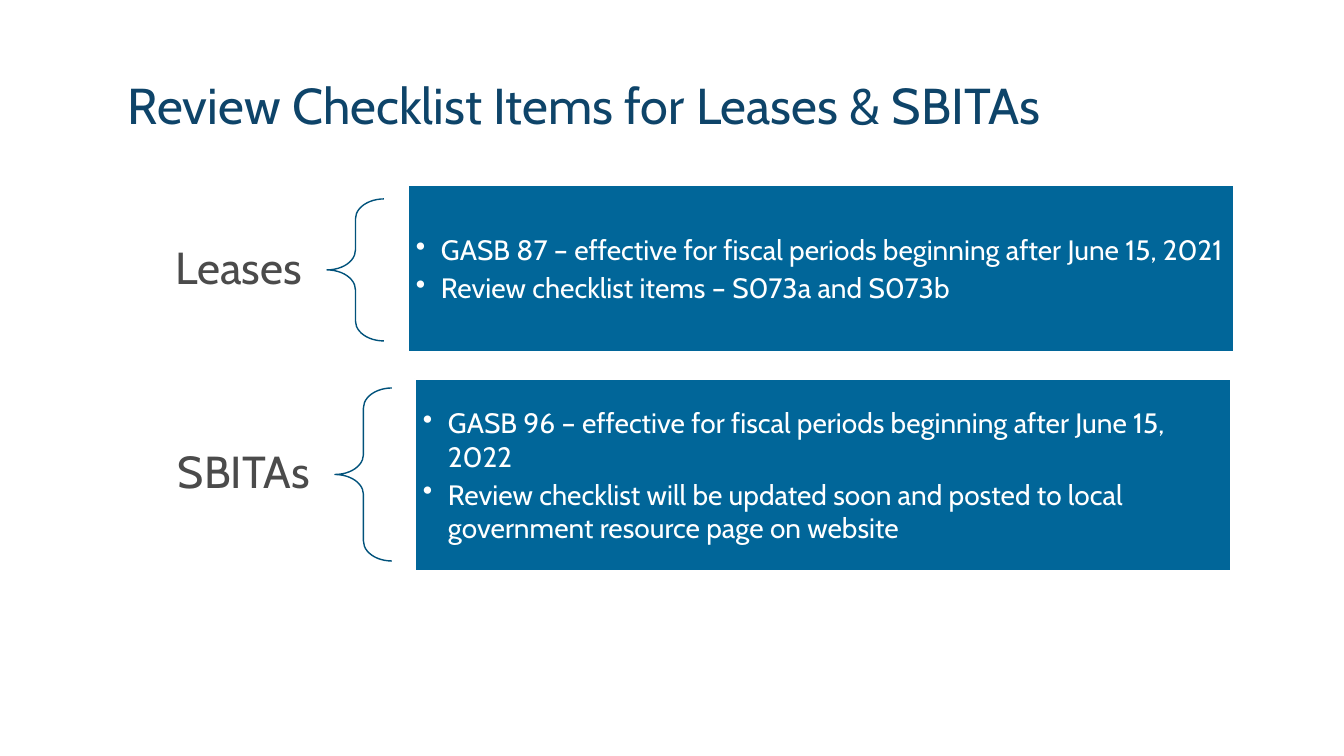
from pptx import Presentation
from pptx.dml.color import RGBColor
from pptx.enum.shapes import MSO_SHAPE
from pptx.enum.text import MSO_ANCHOR, PP_ALIGN
from pptx.oxml.ns import qn
from pptx.util import Emu, Pt
from lxml import etree

RECTANGLE, LEFT_BRACE = MSO_SHAPE.RECTANGLE, MSO_SHAPE.LEFT_BRACE
TOP, MIDDLE = MSO_ANCHOR.TOP, MSO_ANCHOR.MIDDLE
LEFT, RIGHT = PP_ALIGN.LEFT, PP_ALIGN.RIGHT

PX = 914400 / 100.8
FONT = "Cabin"
COLORS = {"title": "0E4469", "label": "4B4B4B", "brace": "01527B",
          "panel": "016699", "white": "FFFFFF"}


def px(*lengths):
    """Turn pixel lengths into EMU."""
    return [Emu(round(length * PX)) for length in lengths]


def write(shape, lines, size, color, anchor, align, insets, spacing=1, bullets=False):
    """Fill a shape with evenly styled paragraphs."""
    frame = shape.text_frame
    side, edge = px(*insets)
    frame_format = {"word_wrap": True, "vertical_anchor": anchor,
                    "margin_left": side, "margin_right": side,
                    "margin_top": edge, "margin_bottom": edge}
    for name, value in frame_format.items():
        setattr(frame, name, value)
    frame.text = "\n".join(lines)
    for paragraph in frame.paragraphs:
        paragraph.alignment = align
        paragraph.line_spacing = spacing
        if bullets:
            paragraph.space_after = Pt(3)
            properties = paragraph._p.get_or_add_pPr()
            indent, = px(25)
            properties.set("marL", str(indent))
            properties.set("indent", str(-indent))
            etree.SubElement(properties, qn("a:buChar")).set("char", "•")
        for run in paragraph.runs:
            run.font.name = FONT
            run.font.size = Pt(size)
            run.font.color.rgb = RGBColor.from_string(COLORS[color])


prs = Presentation()
prs.slide_width, prs.slide_height = px(1344, 756)
slide = prs.slides.add_slide(prs.slide_layouts[6])
shapes = slide.shapes

title = shapes.add_textbox(*px(118, 76, 1159, 100))
write(title, ["Review Checklist Items for Leases & SBITAs"], 36, "title",
      TOP, LEFT, (10, 5), 0.9)

# Each topic: label, label box, brace box, panel box, panel items
topics = [
    ("Leases", (135, 199, 192, 142), (327, 199, 57, 142), (408, 185, 826, 167),
     ["GASB 87 – effective for fiscal periods beginning after June 15, 2021",
      "Review checklist items – S073a and S073b"]),
    ("SBITAs", (135, 403, 200, 142), (335, 388, 57, 173), (415, 379, 816, 192),
     ["GASB 96 – effective for fiscal periods beginning after June 15, 2022",
      "Review checklist will be updated soon and posted to local government "
      "resource page on website"]),
]

for topic, label_box, brace_box, panel_box, items in topics:
    label = shapes.add_textbox(*px(*label_box))
    write(label, [topic], 32, "label", MIDDLE, RIGHT, (25, 9), 0.9)

    brace = shapes.add_shape(LEFT_BRACE, *px(*brace_box))
    brace.adjustments[0] = 0.35
    brace.adjustments[1] = 0.5
    brace.fill.background()

    panel = shapes.add_shape(RECTANGLE, *px(*panel_box))
    panel.fill.solid()
    panel.fill.fore_color.rgb = RGBColor.from_string(COLORS["panel"])
    write(panel, items, 20, "white", MIDDLE, LEFT, (8, 8), bullets=True)

    for shape, line_color in ((brace, "brace"), (panel, "white")):
        shape.shadow.inherit = False
        shape.line.color.rgb = RGBColor.from_string(COLORS[line_color])
        shape.line.width = Pt(1)

prs.save("out.pptx")
